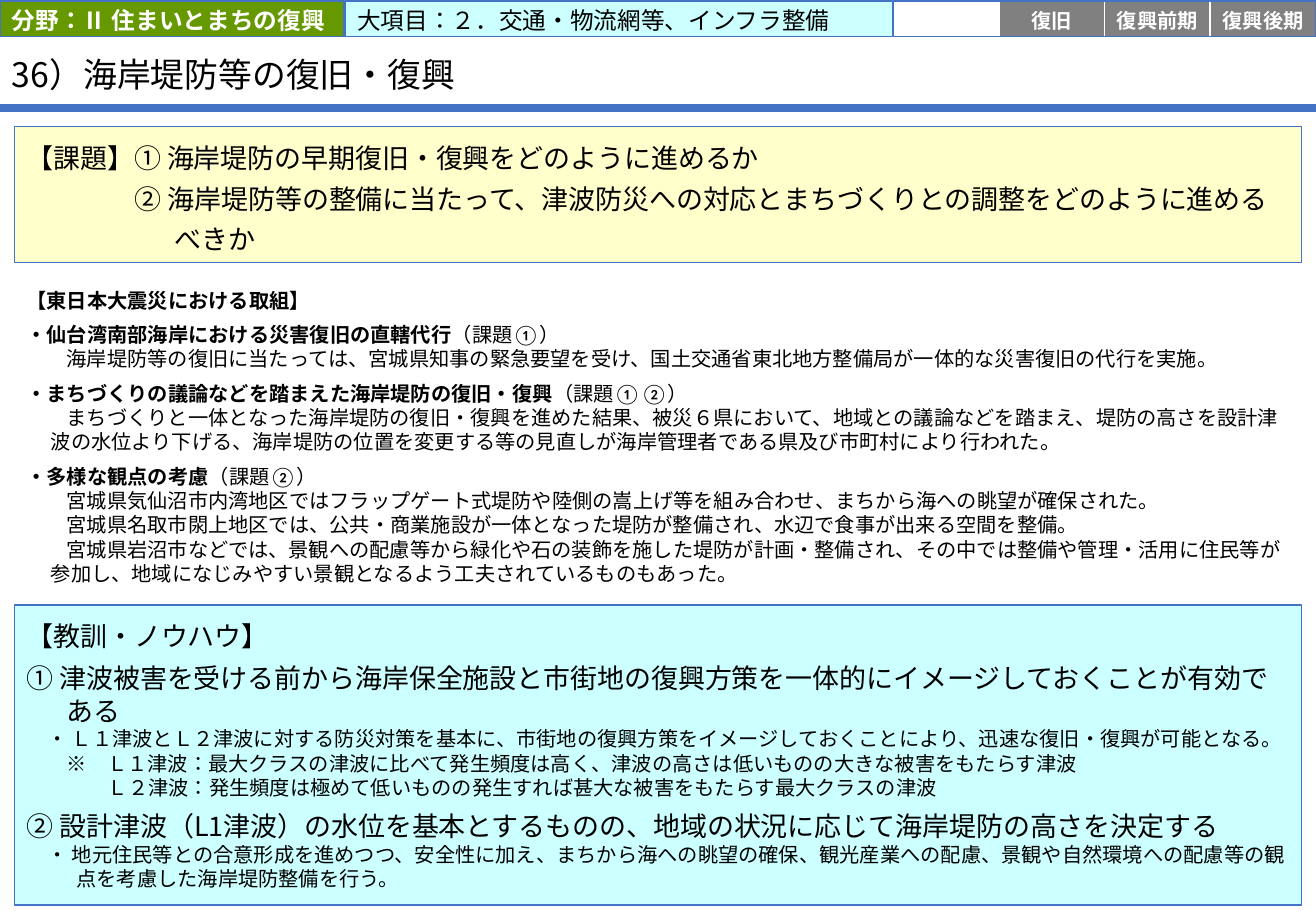
from dataclasses import dataclass

from lxml.etree import SubElement
from pptx import Presentation
from pptx.dml.color import RGBColor
from pptx.enum.lang import MSO_LANGUAGE_ID
from pptx.enum.shapes import MSO_CONNECTOR, MSO_SHAPE
from pptx.enum.text import MSO_ANCHOR, PP_ALIGN
from pptx.oxml.ns import qn
from pptx.util import Inches, Pt


@dataclass(frozen=True)
class Theme:
    blue: str = "4472C4"
    green: str = "669900"
    cyan: str = "CCFFFF"
    cream: str = "FFFFCC"
    gray: str = "808080"
    white: str = "FFFFFF"
    black: str = "000000"
    title: int = 20
    lead: int = 16
    tab: int = 14
    note: int = 12
    latin: str = "Calibri"
    kanji: str = "Noto Sans CJK JP"


T = Theme()


def add_run(para, text, size=T.note, font=T.kanji, color=T.black, bold=False):
    run = para.add_run()
    run.text = text
    face = run.font
    face.size, face.bold, face.name = Pt(size), bold, font
    face.language_id = MSO_LANGUAGE_ID.JAPANESE
    face.color.rgb = RGBColor.from_string(color)
    SubElement(face._element, qn("a:ea")).set("typeface", font)


def add_para(frame, text, left=0, first=0, before=0, line=None,
             align=PP_ALIGN.LEFT, tail=None, **style):
    """Add text; left and first are the starts of later lines and of line one."""
    para = frame.paragraphs[0]
    if para.runs:
        para = frame.add_paragraph()
    para.alignment = align
    para.space_before = Pt(before)
    if line:
        para.line_spacing = line
    props = para._p.get_or_add_pPr()
    props.set("marL", str(Inches(left)))
    props.set("indent", str(Inches(first - left)))
    add_run(para, text, **style)
    if tail:
        add_run(para, tail, font=T.latin)


def set_frame(shape, inset, anchor=MSO_ANCHOR.MIDDLE):
    frame = shape.text_frame
    frame.word_wrap = True
    frame.vertical_anchor = anchor
    (frame.margin_left, frame.margin_top,
     frame.margin_right, frame.margin_bottom) = map(Inches, inset)
    return frame


def add_box(slide, box, fill=None, line=None):
    shape = slide.shapes.add_shape(MSO_SHAPE.RECTANGLE, *map(Inches, box))
    shape.shadow.inherit = False
    if fill:
        shape.fill.solid()
        shape.fill.fore_color.rgb = RGBColor.from_string(fill)
    else:
        shape.fill.background()
    if line:
        shape.line.color.rgb = RGBColor.from_string(line)
        shape.line.width = Pt(1)
    else:
        shape.line.fill.background()
    return shape


def add_title(slide, box):
    x, y, w, h = box
    # Rule under the title, across the slide
    rule = slide.shapes.add_connector(
        MSO_CONNECTOR.STRAIGHT, Inches(x), Inches(y + 0.57),
        Inches(x + 10.83), Inches(y + 0.57))
    rule.line.color.rgb = RGBColor.from_string(T.blue)
    rule.line.width = Pt(4.5)
    SubElement(rule._element.spPr, qn("a:effectLst"))
    # Title text
    shape = slide.shapes.add_textbox(*map(Inches, box))
    frame = set_frame(shape, (0.1, 0.04, 0.1, 0))
    add_para(frame, "36）海岸堤防等の復旧・復興", size=T.title, line=0.9)


def add_head(slide, box):
    x, y, w, h = box
    # Field and category
    tabs = [
        (0, 2.83, "分野：Ⅱ 住まいとまちの復興", T.green, T.white, True),
        (2.84, 4.53, "大項目：２．交通・物流網等、インフラ整備", T.cyan, T.black, False),
    ]
    for left, wide, text, fill, color, bold in tabs:
        shape = add_box(slide, (x + left, y, wide, h), fill, T.blue)
        add_para(set_frame(shape, (0.1, 0.02, 0.1, 0)), text,
                 size=T.tab, font=T.latin, color=color, bold=bold)
    # Phases, in equal cells with one border
    phases = ["", "復旧", "復興前期", "復興後期"]
    start, cell = x + 7.35, 0.87
    for i, text in enumerate(phases):
        shape = add_box(slide, (start + i * cell, y, cell, h),
                        T.gray if text else T.white, T.white)
        if text:
            add_para(set_frame(shape, (0, 0.02, 0, 0)), text, font=T.latin,
                     color=T.white, bold=True, align=PP_ALIGN.CENTER)
    add_box(slide, (start, y, cell * len(phases), h), line=T.blue)


def add_issues(slide, box):
    frame = set_frame(add_box(slide, box, T.cream, T.blue),
                      (0.1, 0.12, 0.1, 0.12))
    add_para(frame, "【課題】① 海岸堤防の早期復旧・復興をどのように進めるか",
             size=T.lead, line=Pt(24))
    add_para(frame, "② 海岸堤防等の整備に当たって、津波防災への対応とまちづくりとの調整をどのように進めるべきか",
             size=T.lead, line=Pt(24), left=1.22, first=0.89)


def add_efforts(slide, box):
    frame = set_frame(add_box(slide, box, T.white), (0.1, 0.05, 0.1, 0.05))
    add_para(frame, "【東日本大震災における取組】", font=T.latin, bold=True)
    # Heading, its font, issue number, details
    efforts = [
        ("・仙台湾南部海岸における災害復旧の直轄代行", T.latin, "（課題①）", [
            "海岸堤防等の復旧に当たっては、宮城県知事の緊急要望を受け、国土交通省東北地方整備局が一体的な災害復旧の代行を実施。"]),
        ("・まちづくりの議論などを踏まえた海岸堤防の復旧・復興", T.latin, "（課題①②）", [
            "まちづくりと一体となった海岸堤防の復旧・復興を進めた結果、被災６県において、地域との議論などを踏まえ、堤防の高さを設計津波の水位より下げる、海岸堤防の位置を変更する等の見直しが海岸管理者である県及び市町村により行われた。"]),
        ("・多様な観点の考慮", T.kanji, "（課題②）", [
            "宮城県気仙沼市内湾地区ではフラップゲート式堤防や陸側の嵩上げ等を組み合わせ、まちから海への眺望が確保された。",
            "宮城県名取市閖上地区では、公共・商業施設が一体となった堤防が整備され、水辺で食事が出来る空間を整備。",
            "宮城県岩沼市などでは、景観への配慮等から緑化や石の装飾を施した堤防が計画・整備され、その中では整備や管理・活用に住民等が参加し、地域になじみやすい景観となるよう工夫されているものもあった。"]),
    ]
    for head, font, issue, details in efforts:
        add_para(frame, head, left=0.2, before=6, font=font, bold=True, tail=issue)
        for text in details:
            add_para(frame, text, left=0.2, first=0.33)


def add_lessons(slide, box):
    frame = set_frame(add_box(slide, box, T.cyan, T.blue),
                      (0.1, 0.12, 0.1, 0), MSO_ANCHOR.TOP)
    # Text, size, left, first, space before
    lessons = [
        ("【教訓・ノウハウ】", T.lead, 0, 0, 0),
        ("① 津波被害を受ける前から海岸保全施設と市街地の復興方策を一体的にイメージしておくことが有効である",
         T.lead, 0.33, 0, 6),
        ("・ Ｌ１津波とＬ２津波に対する防災対策を基本に、市街地の復興方策をイメージしておくことにより、迅速な復旧・復興が可能となる。",
         T.note, 0.41, 0.17, 0),
        ("※　Ｌ１津波：最大クラスの津波に比べて発生頻度は高く、津波の高さは低いものの大きな被害をもたらす津波",
         T.note, 0.41, 0.33, 0),
        ("Ｌ２津波：発生頻度は極めて低いものの発生すれば甚大な被害をもたらす最大クラスの津波",
         T.note, 0.67, 0.67, 0),
        ("② 設計津波（L1津波）の水位を基本とするものの、地域の状況に応じて海岸堤防の高さを決定する",
         T.lead, 0.41, 0, 6),
        ("・ 地元住民等との合意形成を進めつつ、安全性に加え、まちから海への眺望の確保、観光産業への配慮、景観や自然環境への配慮等の観点を考慮した海岸堤防整備を行う。",
         T.note, 0.41, 0.17, 0),
    ]
    for text, size, left, first, before in lessons:
        add_para(frame, text, size=size, left=left, first=first, before=before)


def main():
    deck = Presentation()
    deck.slide_width, deck.slide_height = Inches(10.83), Inches(7.5)
    slide = deck.slides.add_slide(deck.slide_layouts[6])
    left, wide = 0.12, 10.59
    add_efforts(slide, (left, 2.21, wide, 2.77))
    add_title(slide, (0, 0.32, 9.48, 0.58))
    add_head(slide, (0, 0.01, 10.83, 0.29))
    add_issues(slide, (left, 1.04, wide, 1.12))
    add_lessons(slide, (left, 4.98, wide, 2.47))
    deck.save("out.pptx")


if __name__ == "__main__":
    main()
